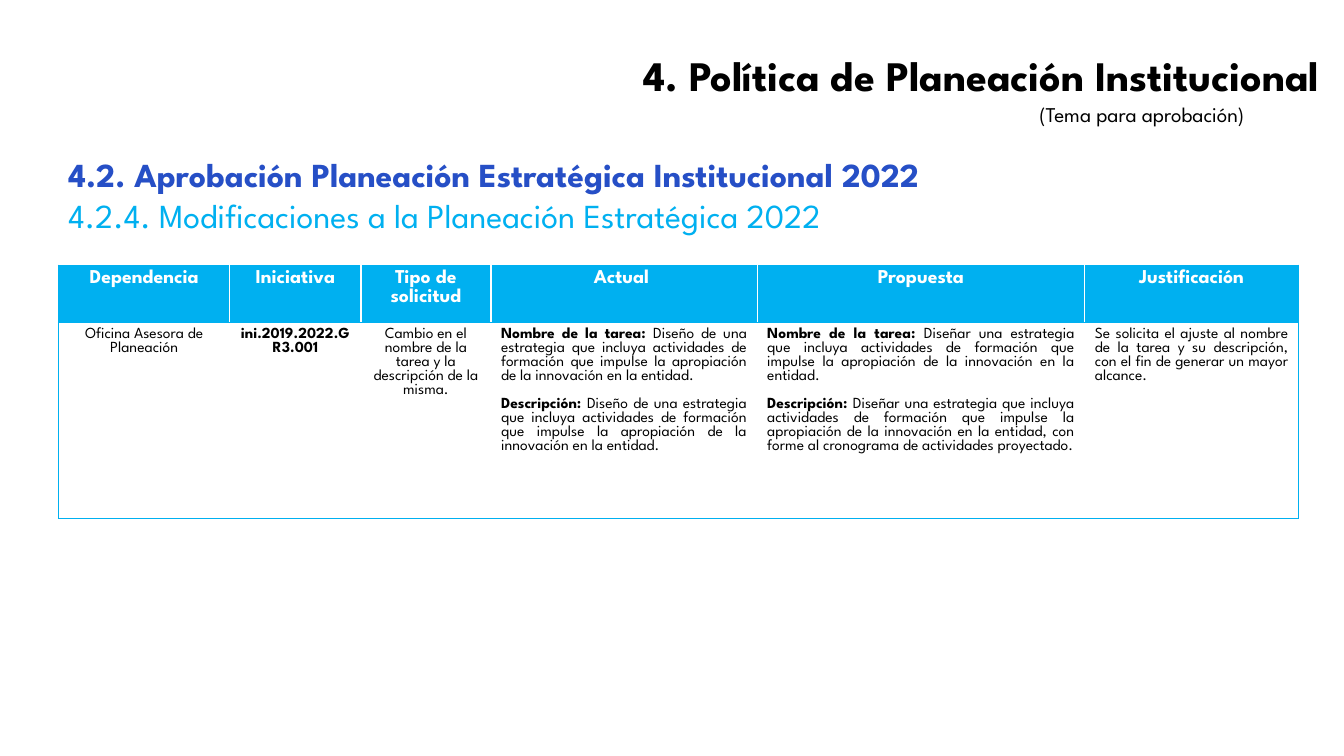
from lxml import etree
from pptx import Presentation
from pptx.dml.color import RGBColor
from pptx.enum.text import MSO_ANCHOR, MSO_AUTO_SIZE, PP_ALIGN
from pptx.oxml.ns import qn
from pptx.util import Inches, Pt

TOP = MSO_ANCHOR.TOP
NO_AUTOFIT = MSO_AUTO_SIZE.NONE
LEFT, CENTER, RIGHT, JUSTIFY = PP_ALIGN.LEFT, PP_ALIGN.CENTER, PP_ALIGN.RIGHT, PP_ALIGN.JUSTIFY
FONT = "League Spartan"
COLORS = {"text": "000000", "heading": "264FC6", "accent": "00B0F0", "white": "FFFFFF"}
TITLE_ONLY = 5
COLUMN_WIDTHS = [1.7, 1.3, 1.29, 2.64, 3.25, 2.12]
ROW_HEIGHTS = [0.56, 1.95]
HEADERS = ["Dependencia", "Iniciativa", "Tipo de solicitud", "Actual ", "Propuesta", "Justificación"]
TASK, DESCRIPTION = "Nombre de la tarea: ", "Descripción: "
CURRENT = ("Diseño de una estrategia que incluya actividades de formación que impulse "
           "la apropiación de la innovación en la entidad.")
PROPOSED = CURRENT.replace("Diseño de", "Diseñar")
PROPOSED_DESCRIPTION = PROPOSED.replace(
    "entidad.", "entidad, con forme al cronograma de actividades proyectado.")
CHANGE = [
    (CENTER, [("", "Oficina Asesora de Planeación")]),
    (CENTER, [("ini.2019.2022.GR3.001", "")]),
    (CENTER, [("", "Cambio en el nombre de la tarea y la descripción de la misma.")]),
    (JUSTIFY, [(TASK, CURRENT), (DESCRIPTION, CURRENT)]),
    (JUSTIFY, [(TASK, PROPOSED), (DESCRIPTION, PROPOSED_DESCRIPTION)]),
    (JUSTIFY, [("", "Se solicita el ajuste al nombre de la tarea y su descripción, "
                    "con el fin de generar un mayor alcance.")]),
]


def style(paragraph, size, color, bold=None, align=LEFT):
    """Set the font and alignment of a paragraph."""
    paragraph.alignment = align
    paragraph.font.name = FONT
    paragraph.font.size = Pt(size)
    paragraph.font.bold = bold
    paragraph.font.color.rgb = RGBColor.from_string(COLORS[color])


def place(shape, box):
    """Move a shape to a box given in inches."""
    shape.left, shape.top, shape.width, shape.height = map(Inches, box)


def add_title(slide, box):
    """Format the title placeholder inside the box."""
    title = slide.shapes.title
    place(title, box)
    title.text_frame.text = "4. Política de Planeación Institucional"
    title.text_frame.vertical_anchor = TOP
    title.text_frame.auto_size = NO_AUTOFIT
    style(title.text_frame.paragraphs[0], 30, "text", True, RIGHT)


def add_lines(slide, box, lines):
    """Write one paragraph per (text, size, color, bold) line in the box."""
    frame = slide.shapes.add_textbox(*map(Inches, box)).text_frame
    frame.word_wrap = True
    frame.text = "\n".join(line[0] for line in lines)
    for paragraph, (_, size, color, bold) in zip(frame.paragraphs, lines):
        style(paragraph, size, color, bold)


def set_borders(cell, first, last):
    """Draw accent lines outside the table and white lines between columns."""
    properties = cell._tc.get_or_add_tcPr()
    sides = {"L": "accent" if first else "white", "R": "accent" if last else "white",
             "T": "accent", "B": "accent"}
    for position, (side, color) in enumerate(sides.items()):
        line = etree.Element(qn(f"a:ln{side}"), w=str(Pt(1)))
        fill = etree.SubElement(line, qn("a:solidFill"))
        etree.SubElement(fill, qn("a:srgbClr"), val=COLORS[color])
        properties.insert(position, line)


def fill_cell(cell, entries, align, size, color, background):
    """Write (bold label, plain text) paragraphs into a filled cell."""
    cell.fill.solid()
    cell.fill.fore_color.rgb = RGBColor.from_string(COLORS[background])
    frame = cell.text_frame
    for index, (label, text) in enumerate(entries):
        paragraph = frame.add_paragraph() if index else frame.paragraphs[0]
        for part, bold in ((label, True), (text, False)):
            if part:
                run = paragraph.add_run()
                run.text = part
                run.font.bold = bold
        style(paragraph, size, color, align=align)
        if index:
            paragraph.space_before = Pt(10)


def add_changes_table(slide, left, top):
    """Build the table of changes from its upper left corner."""
    table = slide.shapes.add_table(
        len(ROW_HEIGHTS), len(COLUMN_WIDTHS), Inches(left), Inches(top),
        Inches(sum(COLUMN_WIDTHS)), Inches(sum(ROW_HEIGHTS))).table
    for row, height in zip(table.rows, ROW_HEIGHTS):
        row.height = Inches(height)
    last = len(COLUMN_WIDTHS) - 1
    for index, (width, header, (align, entries)) in enumerate(zip(COLUMN_WIDTHS, HEADERS, CHANGE)):
        table.columns[index].width = Inches(width)
        fill_cell(table.cell(0, index), [(header, "")], CENTER, 14, "white", "accent")
        fill_cell(table.cell(1, index), entries, align, 11, "text", "white")
        for row in range(len(ROW_HEIGHTS)):
            set_borders(table.cell(row, index), index == 0, index == last)


def main():
    """Build the slide and save it."""
    deck = Presentation()
    deck.slide_width, deck.slide_height = Inches(13.33), Inches(7.5)
    slide = deck.slides.add_slide(deck.slide_layouts[TITLE_ONLY])
    add_title(slide, (3.82, 0.44, 9.37, 0.61))
    add_lines(slide, (10.21, 0.96, 2.76, 0.35), [("(Tema para aprobación)", 15, "text", False)])
    add_lines(slide, (0.58, 1.48, 12.75, 0.91), [
        ("4.2. Aprobación Planeación Estratégica Institucional 2022", 24, "heading", True),
        ("4.2.4. Modificaciones a la Planeación Estratégica 2022", 24, "accent", False),
    ])
    add_changes_table(slide, 0.58, 2.63)
    deck.save("out.pptx")


if __name__ == "__main__":
    main()
